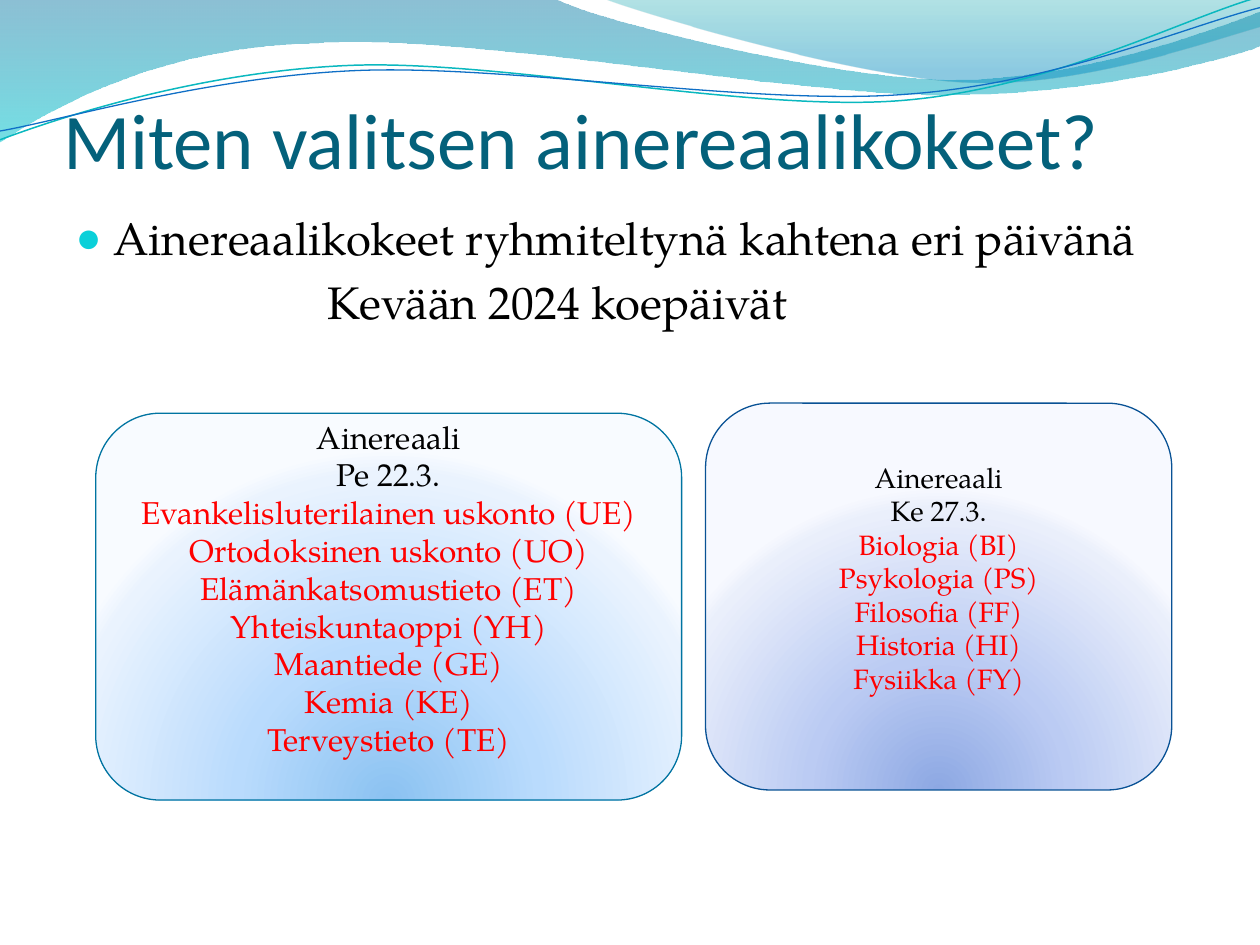
import math

import lxml.etree
import pptx
import pptx.dml.color
import pptx.enum.shapes
import pptx.enum.text
import pptx.oxml.ns
import pptx.util

SERIF = "TeX Gyre Pagella"
TITLE = "Miten valitsen ainereaalikokeet?"
BODY = ["Ainereaalikokeet ryhmiteltynä kahtena eri päivänä", "Kevään 2024 koepäivät"]

WAVES = [
    {"box": (-0.01, -0.01, 10.02, 1.14), "rotation": 0, "start": (0, 0),
     "segments": [(4.4, -0.01), (4.76, 0.17, 6.64, 0.63, 7.58, 0.63), (8.53, 0.63, 9.58, 0.26, 10, 0.09),
                  (10.01, 0.36), (9.83, 0.44, 8.7, 0.76, 7.46, 0.75), (6.22, 0.75, 3.82, 0.28, 2.57, 0.34),
                  (1.29, 0.36, 0.46, 0.83, -0.01, 1.13), (0, 0)],
     "stops": [(0, "0074A1", 45), (100, "00C6CF", 55)]},
    {"box": (4.79, -0.01, 5.21, 0.7), "rotation": 0, "start": (4.79, -0.01),
     "segments": [(5.09, 0.11, 6.82, 0.62, 7.69, 0.65), (8.56, 0.69, 9.61, 0.32, 10, 0.21),
                  (10, 0), (4.79, -0.01)],
     "stops": [(0, "00A1A9", 30), (80, "008BBF", 45)]},
    {"box": (-0.02, 0.22, 10.02, 0.71), "rotation": -2.7, "start": (0, 1.11),
     "segments": [(0.48, 0.93, 1.58, 0.57, 2.77, 0.52), (3.95, 0.47, 5.93, 0.89, 7.13, 0.8),
                  (8.33, 0.71, 9.38, 0.15, 9.98, -0.02)],
     "line": ("0AB8BF", 0.85)},
    {"box": (-0.02, 0.3, 10.03, 0.58), "rotation": -2.7, "start": (0, 1.04),
     "segments": [(0.47, 0.96, 1.64, 0.61, 2.83, 0.56), (4.03, 0.51, 5.97, 0.84, 7.17, 0.75),
                  (8.36, 0.67, 9.41, 0.21, 10, 0.06)],
     "line": ("0F6FC6", 0.75)},
]

CARDS = [
    {"box": (0.76, 3.28, 4.65, 3.07), "size": 18, "line": "0074A1",
     "stops": [(0, "8BC2F1", 100), (43, "B9DBFD", 100), (93, "EAF3FE", 100), (100, "F8FBFF", 100)],
     "heading": ["Ainereaali", "Pe 22.3."],
     "subjects": ["Evankelisluterilainen uskonto (UE)", "Ortodoksinen uskonto (UO)",
                  "Elämänkatsomustieto (ET)", "Yhteiskuntaoppi (YH)\vMaantiede (GE)",
                  "Kemia (KE)", "Terveystieto (TE)"]},
    {"box": (5.6, 3.2, 3.7, 3.07), "size": 16, "line": "095295",
     "stops": [(0, "8DA8E3", 100), (43, "BBCBF3", 100), (93, "EAEFFB", 100), (100, "F7F9FF", 100)],
     "heading": ["Ainereaali", "Ke 27.3."],
     "subjects": ["Biologia (BI)", "Psykologia (PS)", "Filosofia (FF)", "Historia (HI)", "Fysiikka (FY)"]},
]


def rgb(value):
    return pptx.dml.color.RGBColor.from_string(value)


def add_xml(parent, tag, **attributes):
    values = {name: str(value) for name, value in attributes.items()}
    return lxml.etree.SubElement(parent, pptx.oxml.ns.qn(tag), values)


def add_color(parent, value, opacity):
    color = add_xml(parent, "a:srgbClr", val=value)
    if opacity < 100:
        add_xml(color, "a:alpha", val=opacity * 1000)


def fill_gradient(shape, stops, radial=False):
    shape.fill.gradient()
    gradient = shape.element.spPr.find(pptx.oxml.ns.qn("a:gradFill"))
    for child in list(gradient):
        gradient.remove(child)
    stop_list = add_xml(gradient, "a:gsLst")
    for position, value, opacity in stops:
        add_color(add_xml(stop_list, "a:gs", pos=position * 1000), value, opacity)
    if radial:
        circle = add_xml(gradient, "a:path", path="circle")
        add_xml(circle, "a:fillToRect", l=50000, t=130000, r=50000, b=-30000)
    else:
        add_xml(gradient, "a:lin", ang=90 * 60000, scaled=1)


def set_line(shape, value, width):
    shape.line.color.rgb = rgb(value)
    shape.line.width = pptx.util.Pt(width)


def format_runs(paragraph, size, value, font=SERIF):
    for run in paragraph.runs:
        run.font.size = pptx.util.Pt(size)
        run.font.name = font
        run.font.color.rgb = rgb(value)


def place(shape, *box):
    shape.left, shape.top, shape.width, shape.height = map(pptx.util.Inches, box)


def to_local(point, box, rotation):
    left, top, width, height = box
    x, y = point[0] - left - width / 2, point[1] - top - height / 2
    cosine, sine = math.cos(math.radians(-rotation)), math.sin(math.radians(-rotation))
    return (pptx.util.Inches(x * cosine - y * sine + width / 2),
            pptx.util.Inches(x * sine + y * cosine + height / 2))


def draw_outline(shape, wave):
    outline = next(shape.element.iter(pptx.oxml.ns.qn("a:path")))
    for child in list(outline):
        outline.remove(child)
    outline.set("w", str(pptx.util.Inches(wave["box"][2])))
    outline.set("h", str(pptx.util.Inches(wave["box"][3])))
    for index, segment in enumerate([wave["start"]] + wave["segments"]):
        tag = "a:moveTo" if index == 0 else "a:lnTo" if len(segment) == 2 else "a:cubicBezTo"
        command = add_xml(outline, tag)
        for point in zip(segment[::2], segment[1::2]):
            x, y = to_local(point, wave["box"], wave["rotation"])
            add_xml(command, "a:pt", x=x, y=y)
    if "stops" in wave:
        add_xml(outline, "a:close")


def add_wave(slide, wave):
    anchors = [tuple(map(pptx.util.Inches, segment[-2:])) for segment in wave["segments"]]
    builder = slide.shapes.build_freeform(*map(pptx.util.Inches, wave["start"]))
    builder.add_line_segments(anchors, close=False)
    shape = builder.convert_to_shape()
    draw_outline(shape, wave)
    place(shape, *wave["box"])
    shape.rotation = wave["rotation"]
    shape.shadow.inherit = False
    if "stops" in wave:
        fill_gradient(shape, wave["stops"])
        shape.line.fill.background()
    else:
        shape.fill.background()
        set_line(shape, *wave["line"])
    slide.shapes.title.element.addprevious(shape.element)


def add_card(slide, card):
    shape = slide.shapes.add_shape(pptx.enum.shapes.MSO_SHAPE.ROUNDED_RECTANGLE,
                                   *map(pptx.util.Inches, card["box"]))
    fill_gradient(shape, card["stops"], radial=True)
    set_line(shape, card["line"], 0.75)
    shape.shadow.inherit = False
    frame = shape.text_frame
    frame.word_wrap = True
    frame.vertical_anchor = pptx.enum.text.MSO_ANCHOR.MIDDLE
    frame.margin_bottom = pptx.util.Inches(0.35)
    frame.text = "\n".join(card["heading"] + card["subjects"])
    for index, paragraph in enumerate(frame.paragraphs):
        paragraph.alignment = pptx.enum.text.PP_ALIGN.CENTER
        format_runs(paragraph, card["size"], "000000" if index < len(card["heading"]) else "FF0000")


def fill_title(title):
    place(title, 0.5, 0.77, 9, 0.7)
    frame = title.text_frame
    frame.text = TITLE
    frame.auto_size = pptx.enum.text.MSO_AUTO_SIZE.NONE
    frame.vertical_anchor = pptx.enum.text.MSO_ANCHOR.BOTTOM
    frame.margin_left = frame.margin_right = frame.margin_bottom = 0
    frame.paragraphs[0].alignment = pptx.enum.text.PP_ALIGN.LEFT
    format_runs(frame.paragraphs[0], 45, "04617B", "Calibri")


def fill_body(body):
    place(body, 0.5, 1.62, 9, 5.29)
    frame = body.text_frame
    frame.text = "\n".join(BODY)
    frame.auto_size = pptx.enum.text.MSO_AUTO_SIZE.NONE
    for paragraph, (margin, indent) in zip(frame.paragraphs, [(0.3, -0.3), (2, 0)]):
        format_runs(paragraph, 26, "000000")
        paragraph.space_before = pptx.util.Pt(5.2)
        properties = paragraph._p.get_or_add_pPr()
        properties.set("marL", str(pptx.util.Inches(margin)))
        properties.set("indent", str(pptx.util.Inches(indent)))
        if indent:
            add_color(add_xml(properties, "a:buClr"), "0BD0D9", 100)
            add_xml(properties, "a:buSzPct", val=95000)
            add_xml(properties, "a:buChar", char="●")
        else:
            add_xml(properties, "a:buNone")


def main():
    presentation = pptx.Presentation()
    presentation.slide_width = pptx.util.Inches(10)
    presentation.slide_height = pptx.util.Inches(7.5)
    slide = presentation.slides.add_slide(presentation.slide_layouts[1])
    fill_title(slide.shapes.title)
    fill_body(slide.placeholders[1])
    for wave in WAVES:
        add_wave(slide, wave)
    for card in CARDS:
        add_card(slide, card)
    presentation.save("out.pptx")


if __name__ == "__main__":
    main()
